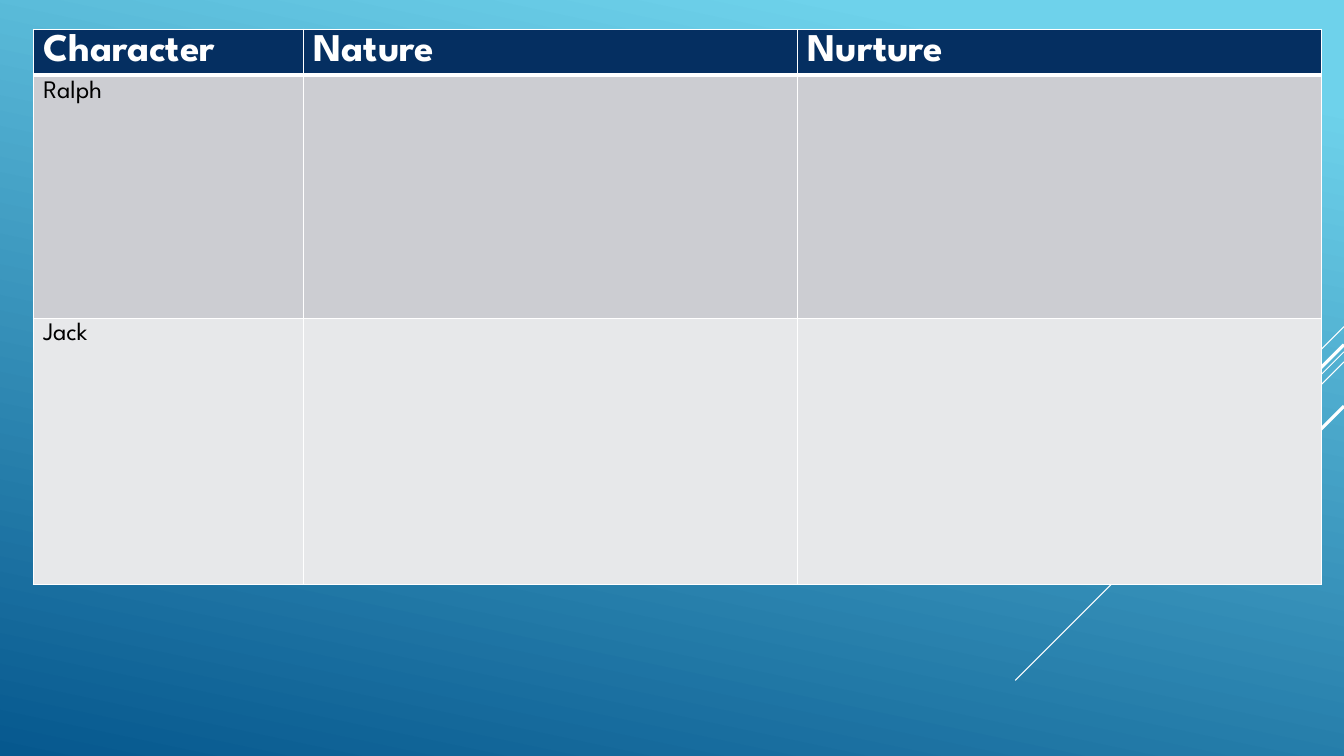
from dataclasses import dataclass

from lxml import etree
from pptx import Presentation
from pptx import util as u
from pptx.dml.color import RGBColor
from pptx.enum import shapes
from pptx.oxml import ns

EMU_PER_PX = 9144  # 100 px to the inch
SLIDE_WIDTH, SLIDE_HEIGHT = 1333, 750
FONT = "League Spartan"

WHITE = RGBColor(0xFF, 0xFF, 0xFF)
BLACK = RGBColor(0x00, 0x00, 0x00)
SKY = RGBColor(0x6E, 0xD2, 0xEB)
OCEAN = RGBColor(0x06, 0x58, 0x8E)
NAVY = RGBColor(0x05, 0x2F, 0x61)
GREY = RGBColor(0xCC, 0xCD, 0xD2)
PALE_GREY = RGBColor(0xE7, 0xE8, 0xEA)


@dataclass
class Diagonal:
    """A line that falls at 45 degrees from the right edge of the slide."""
    top: int
    run: int
    weight: float


@dataclass
class TableRow:
    texts: tuple[str, str, str]
    height: int
    fill: RGBColor
    color: RGBColor
    size: int
    bold: bool
    top_border: int
    bottom_border: int


DIAGONALS = [
    Diagonal(324, 100, 0.75),
    Diagonal(349, 326, 0.75),
    Diagonal(359, 207, 0.75),
    Diagonal(342, 191, 2.25),
    Diagonal(403, 139, 2.25),
]
TABLE_LEFT, TABLE_TOP = 33, 29
COLUMN_WIDTHS = (268, 490, 520)
ROWS = [
    TableRow(("Character", "Nature", "Nurture"), 45, NAVY, WHITE, 28, True, 1, 3),
    TableRow(("Ralph", "", ""), 241, GREY, BLACK, 18, False, 3, 1),
    TableRow(("Jack", "", ""), 264, PALE_GREY, BLACK, 18, False, 1, 1),
]


def px(length: int) -> u.Emu:
    return u.Emu(length * EMU_PER_PX)


def write_text(text_frame, content: str, *, size: int, color: RGBColor, bold: bool) -> None:
    run = text_frame.paragraphs[0].add_run()
    run.text = content
    run.font.name = FONT
    run.font.size = u.Pt(size)
    run.font.bold = bold
    run.font.color.rgb = color


def draw_background(slide) -> None:
    fill = slide.background.fill
    fill.gradient()
    fill.gradient_angle = 258
    for stop, color, position in zip(fill.gradient_stops, (SKY, OCEAN), (0.1, 1.0)):
        stop.color.rgb = color
        stop.position = position


def draw_diagonal(slide, diagonal: Diagonal) -> None:
    line = slide.shapes.add_connector(
        shapes.MSO_CONNECTOR.STRAIGHT,
        px(SLIDE_WIDTH), px(diagonal.top),
        px(SLIDE_WIDTH - diagonal.run), px(diagonal.top + diagonal.run),
    )
    line.line.color.rgb = WHITE
    line.line.width = u.Pt(diagonal.weight)
    etree.SubElement(line._element.spPr, ns.qn("a:effectLst"))


def set_borders(cell, *, top: int, bottom: int) -> None:
    properties = cell._tc.get_or_add_tcPr()
    for side, weight in (("L", 1), ("R", 1), ("T", top), ("B", bottom)):
        border = etree.SubElement(properties, ns.qn(f"a:ln{side}"), w=str(u.Pt(weight)))
        fill = etree.SubElement(border, ns.qn("a:solidFill"))
        etree.SubElement(fill, ns.qn("a:srgbClr"), val=str(WHITE))


def draw_table(slide, rows: list[TableRow]) -> None:
    table = slide.shapes.add_table(
        len(rows), len(COLUMN_WIDTHS), px(TABLE_LEFT), px(TABLE_TOP),
        px(sum(COLUMN_WIDTHS)), px(sum(row.height for row in rows)),
    ).table
    for column, width in zip(table.columns, COLUMN_WIDTHS):
        column.width = px(width)
    for table_row, row in zip(table.rows, rows):
        table_row.height = px(row.height)
        for cell, content in zip(table_row.cells, row.texts):
            set_borders(cell, top=row.top_border, bottom=row.bottom_border)
            cell.fill.solid()
            cell.fill.fore_color.rgb = row.fill
            if content:
                write_text(cell.text_frame, content, size=row.size, color=row.color, bold=row.bold)


def main() -> None:
    presentation = Presentation()
    presentation.slide_width = px(SLIDE_WIDTH)
    presentation.slide_height = px(SLIDE_HEIGHT)
    slide = presentation.slides.add_slide(presentation.slide_layouts[6])

    # Backdrop
    draw_background(slide)
    for diagonal in DIAGONALS:
        draw_diagonal(slide, diagonal)

    # Character table
    draw_table(slide, ROWS)

    presentation.save("out.pptx")


if __name__ == "__main__":
    main()
